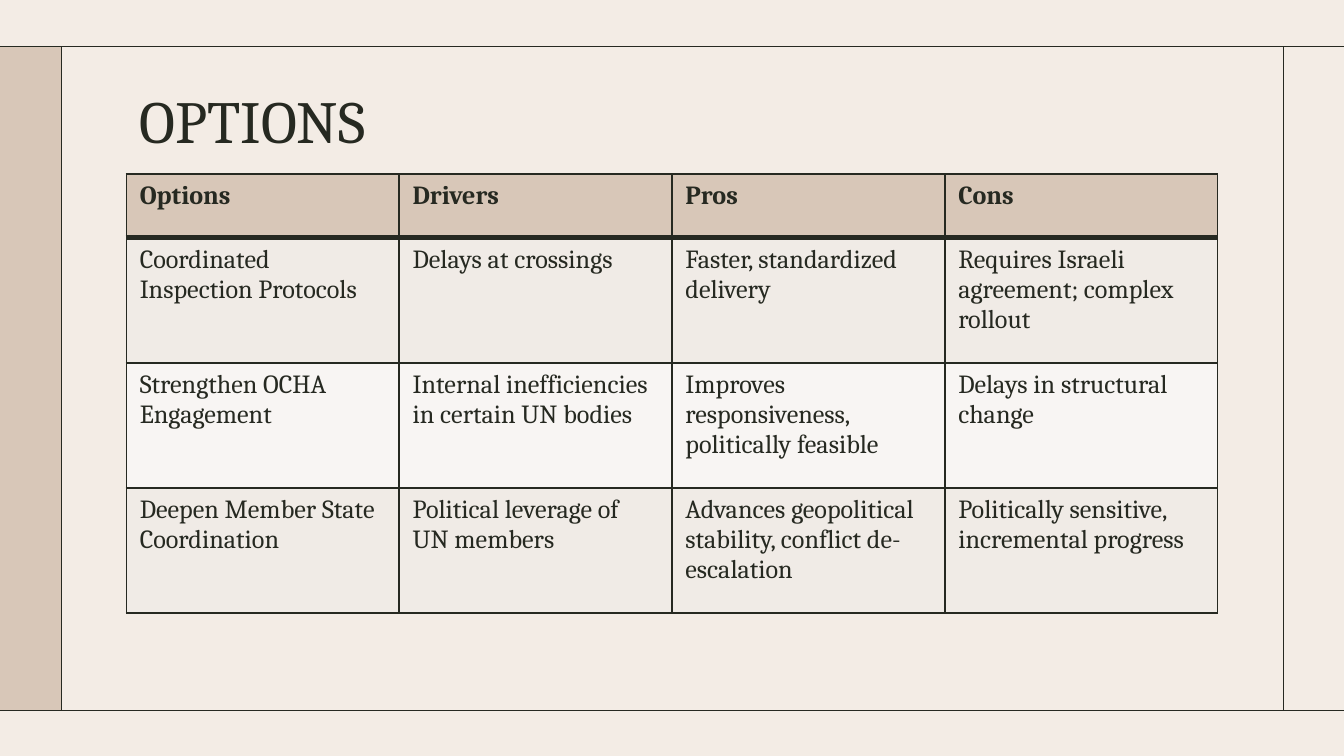
from lxml import etree
from pptx import Presentation
from pptx import util as u
from pptx.dml.color import RGBColor
from pptx.enum import shapes, text
from pptx.oxml import ns

COLORS = {
    "background": "F3ECE5",
    "ink": "262921",
    "sand": "D8C7B8",
    "odd_row": "F0EBE6",
    "even_row": "F8F5F3",
}
FONT = "Cambria"
COLUMNS, ROWS = 100, 56.25  # square grid cells, a tenth of an inch each

OPTIONS = [
    ["Options", "Drivers", "Pros", "Cons"],
    ["Coordinated Inspection Protocols", "Delays at crossings",
     "Faster, standardized delivery",
     "Requires Israeli agreement; complex rollout"],
    ["Strengthen OCHA Engagement",
     "Internal inefficiencies in certain UN bodies",
     "Improves responsiveness, politically feasible",
     "Delays in structural change"],
    ["Deepen Member State Coordination", "Political leverage of UN members",
     "Advances geopolitical stability, conflict de-escalation",
     "Politically sensitive, incremental progress"],
]


def grid(cells):
    return u.Inches(cells / 10)


def color(name):
    return RGBColor.from_string(COLORS[name])


class SlideBuilder:
    """Holds the style and the current slide."""

    def __init__(self, presentation):
        self.slide = presentation.slides.add_slide(presentation.slide_layouts[5])
        self.fill(self.slide.background, "background")

    def fill(self, target, name):
        target.fill.solid()
        target.fill.fore_color.rgb = color(name)

    def format(self, paragraph, size, bold=False):
        paragraph.alignment = text.PP_ALIGN.LEFT
        font = paragraph.font
        font.name, font.size, font.bold = FONT, u.Pt(size), bold
        font.color.rgb = color("ink")

    def rectangle(self, left, top, width, height, name):
        shape = self.slide.shapes.add_shape(
            shapes.MSO_SHAPE.RECTANGLE, *map(grid, (left, top, width, height)))
        shape.shadow.inherit = False
        self.fill(shape, name)
        shape.line.fill.background()

    def line(self, *ends):
        connector = self.slide.shapes.add_connector(
            shapes.MSO_CONNECTOR.STRAIGHT, *map(grid, ends))
        connector.line.color.rgb = color("ink")
        connector.line.width = u.Pt(0.75)
        etree.SubElement(connector._element.spPr, ns.qn("a:effectLst"))

    def title(self, left, top, width, height, words):
        title = self.slide.shapes.title
        title.left, title.top, title.width, title.height = map(
            grid, (left, top, width, height))
        frame = title.text_frame
        frame.text = words
        frame.word_wrap = True
        frame.auto_size = text.MSO_AUTO_SIZE.NONE
        frame.vertical_anchor = text.MSO_ANCHOR.TOP
        self.format(frame.paragraphs[0], 32)

    def border(self, cell, side, points):
        properties = cell._tc.get_or_add_tcPr()
        edge = etree.SubElement(
            properties, ns.qn(f"a:ln{side}"), w=str(u.Pt(points)))
        solid = etree.SubElement(edge, ns.qn("a:solidFill"))
        etree.SubElement(solid, ns.qn("a:srgbClr"), val=COLORS["ink"])

    def table(self, left, top, width, row_heights, rows):
        table = self.slide.shapes.add_table(
            len(rows), len(rows[0]), grid(left), grid(top), grid(width),
            grid(sum(row_heights))).table
        for row, height in zip(table.rows, row_heights):
            row.height = grid(height)
        for r, row in enumerate(rows):
            name = "sand" if r == 0 else "odd_row" if r % 2 else "even_row"
            for c, words in enumerate(row):
                cell = table.cell(r, c)
                cell.text = words
                self.format(cell.text_frame.paragraphs[0], 14, bold=r == 0)
                for side in "LRTB":
                    under_header = (r, side) in ((0, "B"), (1, "T"))
                    self.border(cell, side, 3 if under_header else 1)
                self.fill(cell, name)


def main():
    presentation = Presentation()
    presentation.slide_width = grid(COLUMNS)
    presentation.slide_height = grid(ROWS)
    builder = SlideBuilder(presentation)

    margin, right, frame_top, frame_bottom = 4.6, 95.5, 3.45, 52.85
    builder.rectangle(0, frame_top, margin, frame_bottom - frame_top, "sand")
    for y in (frame_top, frame_bottom):
        builder.line(-0.1, y, COLUMNS + 0.1, y)
    for x in (margin, right):
        builder.line(x, frame_top, x, frame_bottom)

    left = 9.4
    width = COLUMNS - 2 * left
    builder.title(left, 5.7, width, 7.3, "OPTIONS")
    builder.table(left, 12.95, width, [4.75] + [9.3] * 3, OPTIONS)
    presentation.save("out.pptx")


if __name__ == "__main__":
    main()
